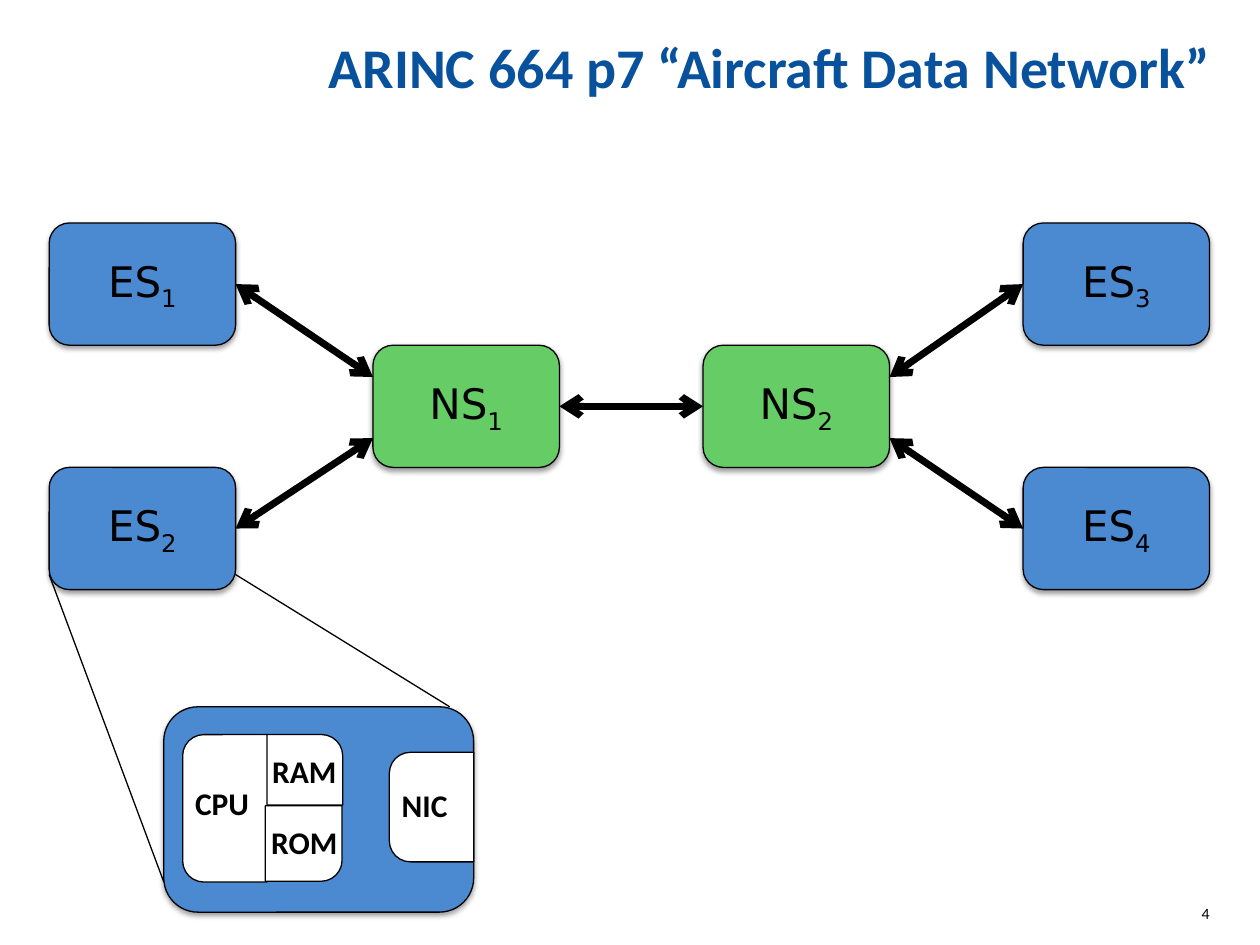
import pptx
import pptx.util
from lxml import etree
from pptx.dml.color import RGBColor
from pptx.enum.shapes import MSO_CONNECTOR, MSO_SHAPE
from pptx.enum.text import MSO_ANCHOR, PP_ALIGN
from pptx.oxml import parse_xml
from pptx.oxml.ns import nsdecls, qn
from pptx.util import Inches, Pt

BLACK = RGBColor(0x00, 0x00, 0x00)
WHITE = RGBColor(0xFF, 0xFF, 0xFF)
TITLE_BLUE = RGBColor(0x08, 0x51, 0x9C)
STATION_BLUE = RGBColor(0x4B, 0x89, 0xD0)
SWITCH_GREEN = RGBColor(0x66, 0xCC, 0x66)

TITLE = "ARINC 664 p7 “Aircraft Data Network”"
PAGE = "4"
NODE_W, NODE_H = 1.48, 0.97
LEFT_X, RIGHT_X = 0.39, 8.12
ROWS = [1.77 + i * NODE_H for i in range(3)]

# (name, index): (left, top, fill)
NODES = {
    ("ES", "1"): (LEFT_X, ROWS[0], STATION_BLUE),
    ("ES", "2"): (LEFT_X, ROWS[2], STATION_BLUE),
    ("NS", "1"): (2.96, ROWS[1], SWITCH_GREEN),
    ("NS", "2"): (5.58, ROWS[1], SWITCH_GREEN),
    ("ES", "3"): (RIGHT_X, ROWS[0], STATION_BLUE),
    ("ES", "4"): (RIGHT_X, ROWS[2], STATION_BLUE),
}
# left node, share of its height, right node, share of its height
LINKS = [
    (("ES", "1"), 0.5, ("NS", "1"), 0.26),
    (("NS", "2"), 0.76, ("ES", "4"), 0.5),
    (("NS", "2"), 0.26, ("ES", "3"), 0.5),
    (("ES", "2"), 0.5, ("NS", "1"), 0.76),
    (("NS", "1"), 0.5, ("NS", "2"), 0.5),
]
DETAIL_BOX = (1.3, 5.61, 2.46, 1.63)
ZOOM_LINES = [((0.39, 4.56), (1.3, 7)), ((1.87, 4.56), (3.57, 5.61))]
# shape, frame before rotation, rotation, adjustments
PARTS = [
    (MSO_SHAPE.ROUND_1_RECTANGLE, (2.11, 5.83, 0.61, 0.56), 0, [0.3]),
    (MSO_SHAPE.ROUND_2_SAME_RECTANGLE, (1.2, 6.08, 1.17, 0.67), 270, [0.25, 0]),
    (MSO_SHAPE.ROUND_1_RECTANGLE, (2.11, 6.39, 0.6, 0.61), 90, [0.28]),
    (MSO_SHAPE.ROUND_2_SAME_RECTANGLE, (2.99, 6.07, 0.87, 0.67), 270, [0.25, 0]),
]
# text, frame, alignment, side inset
PART_LABELS = [
    ("CPU", (1.45, 6.17, 0.67, 0.4), PP_ALIGN.LEFT, 0.1),
    ("RAM", (2.11, 5.97, 0.61, 0.3), PP_ALIGN.CENTER, 0),
    ("ROM", (2.11, 6.53, 0.61, 0.3), PP_ALIGN.CENTER, 0),
    ("NIC", (3.09, 6.19, 0.67, 0.4), PP_ALIGN.LEFT, 0.1),
]


def set_frame(sp, align, anchor, inset=0):
    """Set up the text frame and return its first paragraph."""
    tf = sp.text_frame
    tf.word_wrap = True
    tf.vertical_anchor = anchor
    tf.margin_left = tf.margin_right = Inches(inset)
    tf.margin_top = tf.margin_bottom = 0
    p = tf.paragraphs[0]
    p.alignment = align
    return p


def add_run(p, text, size, font="Calibri", color=BLACK, bold=False):
    r = p.add_run()
    r.text = text
    r.font.name, r.font.size, r.font.bold = font, Pt(size), bold
    r.font.color.rgb = color
    return r


def add_text(slide, text, box, size, align, anchor, inset=0, **style):
    sp = slide.shapes.add_textbox(*map(Inches, box))
    p = set_frame(sp, align, anchor, inset)
    add_run(p, text, size, **style)
    return p


def add_box(slide, kind, box, fill, shadow=False):
    sp = slide.shapes.add_shape(kind, *map(Inches, box))
    sp.fill.solid()
    sp.fill.fore_color.rgb = fill
    sp.line.color.rgb = BLACK
    sp.line.width = Pt(0.75)
    sp.shadow.inherit = False
    if shadow:
        effects = sp._element.spPr.find(qn("a:effectLst"))
        effects.append(parse_xml(
            f'<a:outerShdw {nsdecls("a")} blurRad="{Pt(3.1)}" dist="{Pt(1.6)}" '
            'dir="5400000" rotWithShape="0"><a:srgbClr val="000000">'
            '<a:alpha val="38000"/></a:srgbClr></a:outerShdw>'))
    return sp


def add_line(slide, start, end, width, arrows=False):
    line = slide.shapes.add_connector(
        MSO_CONNECTOR.STRAIGHT, *map(Inches, (*start, *end)))
    line.line.color.rgb = BLACK
    line.line.width = Pt(width)
    if arrows:
        ln = line.line._get_or_add_ln()
        for tag in ("a:headEnd", "a:tailEnd"):
            etree.SubElement(ln, qn(tag), type="arrow")
    etree.SubElement(line._element.spPr, qn("a:effectLst"))


def add_node(slide, name, index, left, top, fill):
    sp = add_box(slide, MSO_SHAPE.ROUNDED_RECTANGLE,
                 (left, top, NODE_W, NODE_H), fill, shadow=True)
    p = set_frame(sp, PP_ALIGN.CENTER, MSO_ANCHOR.MIDDLE)
    add_run(p, name, 24, "DejaVu Sans")
    sub = add_run(p, index, 24, "DejaVu Sans")
    sub.font._element.set("baseline", "-25000")


def main():
    prs = pptx.Presentation()
    prs.slide_width, prs.slide_height = Inches(10), Inches(7.5)
    slide = prs.slides.add_slide(prs.slide_layouts[6])

    add_text(slide, PAGE, (9.27, 7.17, 0.33, 0.33), 9, PP_ALIGN.RIGHT, MSO_ANCHOR.TOP)
    title = add_text(slide, TITLE, (0.39, 0, 9.22, 0.79), 32, PP_ALIGN.RIGHT,
                     MSO_ANCHOR.BOTTOM, color=TITLE_BLUE, bold=True)
    title.line_spacing = 0.8

    for (name, index), place in NODES.items():
        add_node(slide, name, index, *place)
    for a, share_a, b, share_b in LINKS:
        (ax, ay, _), (bx, by, _) = NODES[a], NODES[b]
        add_line(slide, (ax + NODE_W, ay + share_a * NODE_H),
                 (bx, by + share_b * NODE_H), 4, arrows=True)

    add_box(slide, MSO_SHAPE.ROUNDED_RECTANGLE, DETAIL_BOX, STATION_BLUE, shadow=True)
    for start, end in ZOOM_LINES:
        add_line(slide, start, end, 0.75)
    for kind, box, rotation, adjustments in PARTS:
        sp = add_box(slide, kind, box, WHITE)
        sp.rotation = rotation
        for i, value in enumerate(adjustments):
            sp.adjustments[i] = value
    for text, box, align, inset in PART_LABELS:
        add_text(slide, text, box, 18, align, MSO_ANCHOR.MIDDLE, inset, bold=True)

    prs.save("out.pptx")


if __name__ == "__main__":
    main()
